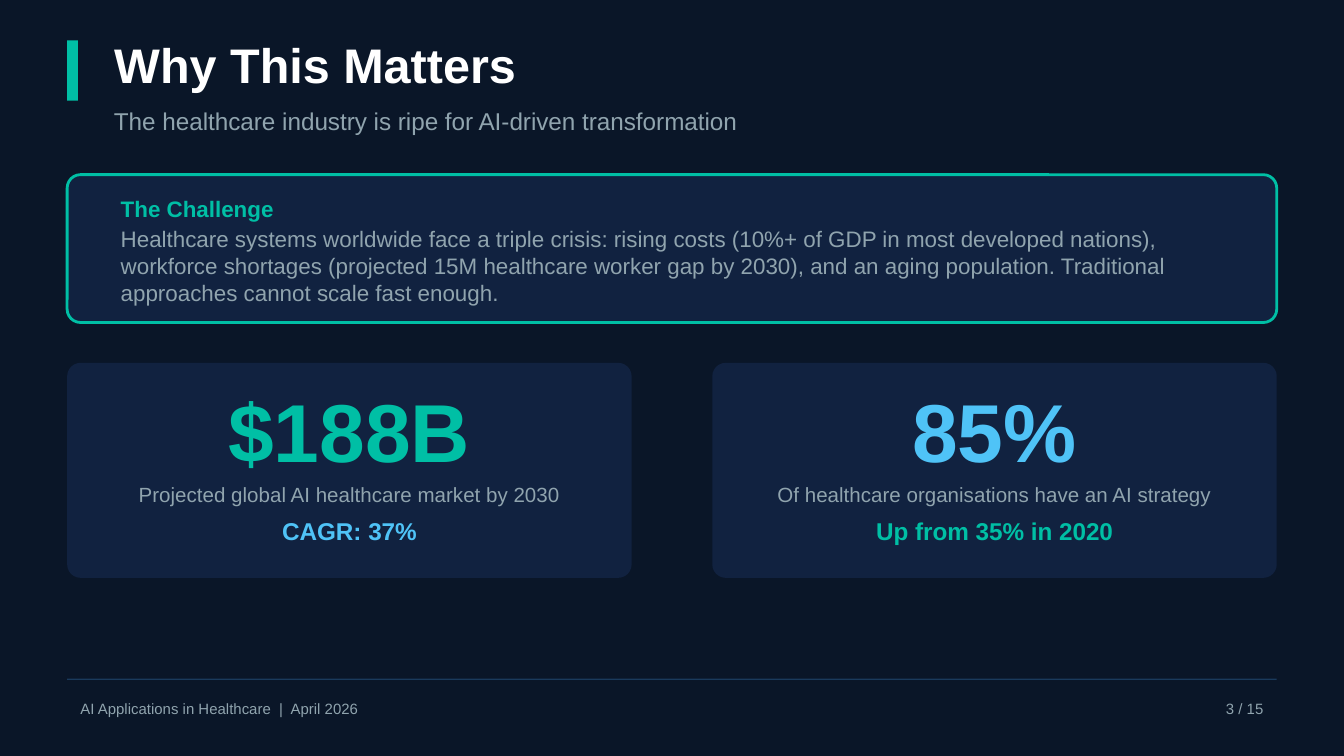
from pptx import Presentation
from pptx.dml.color import RGBColor
from pptx.enum.shapes import MSO_SHAPE
from pptx.enum.text import MSO_ANCHOR, MSO_AUTO_SIZE, PP_ALIGN
from pptx.util import Pt

COLORS = {
    "background": "0A1628",
    "card": "112240",
    "rule": "1A3A5C",
    "teal": "00BFA5",
    "sky": "4FC3F7",
    "muted": "90A4AE",
    "white": "FFFFFF",
}
MARGIN, CONTENT_WIDTH = 36, 648
CORNER_RADIUS = 7.2


def rgb(color):
    return RGBColor.from_string(COLORS[color])


class SlideBuilder:
    """Holds the shared style and the slide being built."""

    font_name = "Arial"

    def __init__(self, slide):
        self.slide = slide
        fill = slide.background.fill
        fill.solid()
        fill.fore_color.rgb = rgb("background")

    def format_text(self, holder, text, size, color, bold=False, align=PP_ALIGN.LEFT):
        frame = holder.text_frame
        frame_format = {
            "word_wrap": True,
            "auto_size": MSO_AUTO_SIZE.NONE,
            "vertical_anchor": MSO_ANCHOR.MIDDLE,
        }
        for name, value in frame_format.items():
            setattr(frame, name, value)
        paragraph = frame.paragraphs[0]
        paragraph.alignment = align
        run = paragraph.add_run()
        run.text = text
        font_format = {"name": self.font_name, "size": Pt(size), "bold": bold}
        for name, value in font_format.items():
            setattr(run.font, name, value)
        run.font.color.rgb = rgb(color)

    def title(self, box, text, size, color):
        heading = self.slide.shapes.title
        for name, value in zip(("left", "top", "width", "height"), box):
            setattr(heading, name, Pt(value))
        self.format_text(heading, text, size, color, bold=True)

    def text(self, box, text, size, color, **style):
        holder = self.slide.shapes.add_textbox(*map(Pt, box))
        self.format_text(holder, text, size, color, **style)

    def block(self, box, color, kind=MSO_SHAPE.RECTANGLE, outline=None):
        block = self.slide.shapes.add_shape(kind, *map(Pt, box))
        block.shadow.inherit = False
        block.fill.solid()
        block.fill.fore_color.rgb = rgb(color)
        if outline:
            block.line.color.rgb = rgb(outline)
            block.line.width = Pt(1.5)
        else:
            block.line.fill.background()
        return block

    def card(self, box, outline=None):
        card = self.block(box, "card", MSO_SHAPE.ROUNDED_RECTANGLE, outline)
        card.adjustments[0] = CORNER_RADIUS / min(box[2:])

    def statistic(self, left, figure, figure_color, caption, detail, detail_color):
        width, inset = 302.4, 14.4
        self.card((left, 194.4, width, 115.2))
        rows = [
            (205.2, 50.4, figure, 44, figure_color, True),
            (252, 25.2, caption, 11, "muted", False),
            (273.6, 21.6, detail, 13, detail_color, True),
        ]
        for top, height, text, size, color, bold in rows:
            box = (left + inset, top, width - 2 * inset, height)
            self.text(box, text, size, color, bold=bold, align=PP_ALIGN.CENTER)


def main():
    deck = Presentation()
    deck.slide_width, deck.slide_height = Pt(720), Pt(405)
    builder = SlideBuilder(deck.slides.add_slide(deck.slide_layouts[5]))

    # Header
    builder.block((MARGIN, 21.6, 5.76, 32.4), "teal")
    builder.title((54, 14.4, 576, 39.6), "Why This Matters", 26, "white")
    builder.text((54, 54, 576, 21.6),
                 "The healthcare industry is ripe for AI-driven transformation",
                 13, "muted")

    # Challenge
    builder.card((MARGIN, 93.6, CONTENT_WIDTH, 79.2), outline="teal")
    builder.text((57.6, 100.8, 216, 21.6), "The Challenge", 12, "teal", bold=True)
    builder.text(
        (57.6, 122.4, 604.8, 39.6),
        "Healthcare systems worldwide face a triple crisis: rising costs "
        "(10%+ of GDP in most developed nations), workforce shortages "
        "(projected 15M healthcare worker gap by 2030), and an aging population. "
        "Traditional approaches cannot scale fast enough.",
        12, "muted")

    # Key figures
    statistics = [
        ("$188B", "teal", "Projected global AI healthcare market by 2030",
         "CAGR: 37%", "sky"),
        ("85%", "sky", "Of healthcare organisations have an AI strategy",
         "Up from 35% in 2020", "teal"),
    ]
    for column, statistic in enumerate(statistics):
        builder.statistic(MARGIN + column * 345.6, *statistic)

    # Footer
    builder.block((MARGIN, 363.6, CONTENT_WIDTH, 0.72), "rule")
    builder.text((MARGIN, 367.2, 432, 25.2),
                 "AI Applications in Healthcare  |  April 2026", 8, "muted")
    builder.text((612, 367.2, 72, 25.2), "3 / 15", 8, "muted", align=PP_ALIGN.RIGHT)

    deck.save("out.pptx")


if __name__ == "__main__":
    main()
